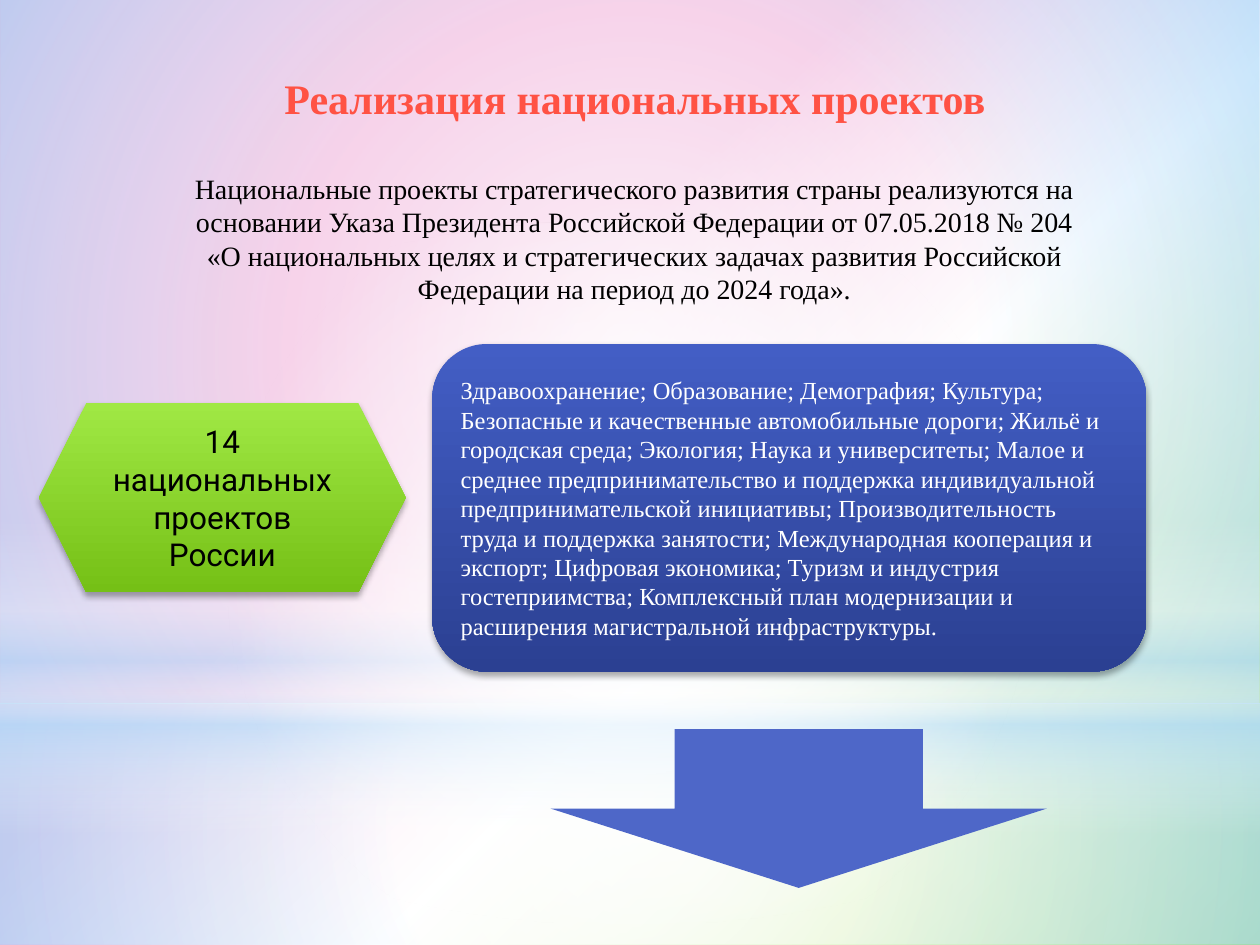
import pptx
import pptx.util
import pptx.oxml
import pptx.oxml.ns
import pptx.dml.color
import pptx.enum.shapes
import pptx.enum.text
import lxml.etree

Pt = pptx.util.Pt
RGBColor = pptx.dml.color.RGBColor
SHAPE = pptx.enum.shapes.MSO_SHAPE
ALIGN = pptx.enum.text.PP_ALIGN
qn = pptx.oxml.ns.qn

WHITE = RGBColor(0xFF, 0xFF, 0xFF)
BLACK = RGBColor(0x00, 0x00, 0x00)
PINK = RGBColor(0xEA, 0x8A, 0xC8)
SKY = RGBColor(0xB4, 0xDC, 0xFA)
GREEN = RGBColor(0x81, 0xD3, 0x1A)
LIME = RGBColor(0xA0, 0xE8, 0x44)
LEAF = RGBColor(0x75, 0xC0, 0x16)
BLUE = RGBColor(0x43, 0x5E, 0xC5)
NAVY = RGBColor(0x2B, 0x40, 0x92)
INDIGO = RGBColor(0x4E, 0x67, 0xC8)
CORAL = RGBColor(0xFF, 0x52, 0x44)
SERIF = "Times New Roman"


def paint_gradient(fill, element, stops, angle):
    fill.gradient()
    gradient = element.find(".//" + qn("a:gradFill"))
    gradient.clear()
    gradient.set("rotWithShape", "1")
    stop_list = lxml.etree.SubElement(gradient, qn("a:gsLst"))
    for position, color, opacity in stops:
        stop = lxml.etree.SubElement(stop_list, qn("a:gs"), pos=str(position * 1000))
        tint = lxml.etree.SubElement(stop, qn("a:srgbClr"), val=str(color))
        if opacity < 100:
            lxml.etree.SubElement(tint, qn("a:alpha"), val=str(opacity * 1000))
    if angle is None:
        center = lxml.etree.SubElement(gradient, qn("a:path"), {"path": "circle"})
        sides = dict.fromkeys("ltrb", "50000")
        lxml.etree.SubElement(center, qn("a:fillToRect"), sides)
    else:
        lxml.etree.SubElement(gradient, qn("a:lin"), ang=str(angle * 60000), scaled="0")


def write_text(shape, text, size, font, color, alignment, bold=False):
    frame = shape.text_frame
    frame.word_wrap = True
    frame.text = text
    paragraph = frame.paragraphs[0]
    paragraph.alignment = alignment
    for run in paragraph.runs:
        run.font.size = Pt(size)
        run.font.name = font
        run.font.bold = bold
        run.font.color.rgb = color


presentation = pptx.Presentation()
presentation.slide_width = Pt(720)
presentation.slide_height = Pt(540)
slide = presentation.slides.add_slide(presentation.slide_layouts[6])

backdrop = [(0, PINK, 100), (39, PINK, 100), (60, WHITE, 100), (100, GREEN, 100)]
paint_gradient(slide.background.fill, slide.element, backdrop, 45)

glows = [
    (SHAPE.RECTANGLE, 401.8, 138.2, None, [(0, WHITE, 91), (37, WHITE, 76), (100, SKY, 79)]),
    (SHAPE.RECTANGLE, 0, 401.8, None, [(0, WHITE, 89), (48, WHITE, 62), (100, SKY, 79)]),
    (SHAPE.RECTANGLE, 296.6, 180, 90, [(0, WHITE, 0), (29, WHITE, 30), (45, SKY, 40),
                                       (55, WHITE, 26), (65, SKY, 60), (100, WHITE, 0)]),
    (SHAPE.OVAL, 126, 401.8, None, [(0, WHITE, 100), (56, WHITE, 0)]),
]
for kind, top, height, angle, stops in glows:
    glow = slide.shapes.add_shape(kind, 0, Pt(top), Pt(720), Pt(height))
    glow.shadow.inherit = False
    glow.line.fill.background()
    paint_gradient(glow.fill, glow.element, stops, angle)

decree = slide.shapes.add_textbox(Pt(76.3), Pt(94.3), Pt(572.4), Pt(85))
write_text(
    decree,
    "Национальные проекты стратегического развития страны реализуются на основании "
    "Указа Президента Российской Федерации от 07.05.2018 № 204\v«О национальных целях "
    "и стратегических задачах развития Российской Федерации на период до 2024 года».",
    16, SERIF, BLACK, ALIGN.CENTER)

title = slide.shapes.add_shape(SHAPE.ROUNDED_RECTANGLE, Pt(82), Pt(33), Pt(561.6), Pt(45.4))
title.shadow.inherit = False
title.fill.background()
title.line.fill.background()
write_text(title, "Реализация национальных проектов", 24, SERIF, CORAL, ALIGN.CENTER, True)

projects = (
    "Здравоохранение; Образование; Демография; Культура; Безопасные и качественные "
    "автомобильные дороги; Жильё и городская среда; Экология; Наука и университеты; "
    "Малое и среднее предпринимательство и поддержка индивидуальной предпринимательской "
    "инициативы; Производительность труда и поддержка занятости; Международная кооперация "
    "и экспорт; Цифровая экономика; Туризм и индустрия гостеприимства; Комплексный план "
    "модернизации и расширения магистральной инфраструктуры.")
cards = [
    (SHAPE.HEXAGON, (22.3, 230.4, 209.5, 108), (LIME, LEAF),
     ("14 национальных проектов России", 18, "Roboto", BLACK, ALIGN.CENTER)),
    (SHAPE.ROUNDED_RECTANGLE, (247, 196.6, 408.2, 187.2), (BLUE, NAVY),
     (projects, 14, SERIF, WHITE, ALIGN.LEFT)),
]
for kind, box, (top_color, bottom_color), label in cards:
    card = slide.shapes.add_shape(kind, *map(Pt, box))
    card.shadow.inherit = False
    card.line.fill.background()
    paint_gradient(card.fill, card.element, [(0, top_color, 100), (100, bottom_color, 100)], 90)
    effects = card.element.spPr.find(qn("a:effectLst"))
    shadow = lxml.etree.SubElement(
        effects, qn("a:outerShdw"), blurRad=str(Pt(3.5)), dist=str(Pt(2.2)),
        dir="5400000", rotWithShape="0")
    shade = lxml.etree.SubElement(shadow, qn("a:srgbClr"), val=str(BLACK))
    lxml.etree.SubElement(shade, qn("a:alpha"), val="32000")
    write_text(card, *label)

arrow = slide.shapes.add_shape(SHAPE.DOWN_ARROW, Pt(314.6), Pt(416.7), Pt(283.7), Pt(90.7))
arrow.shadow.inherit = False
arrow.fill.solid()
arrow.fill.fore_color.rgb = INDIGO
arrow.line.fill.background()

presentation.save("out.pptx")
